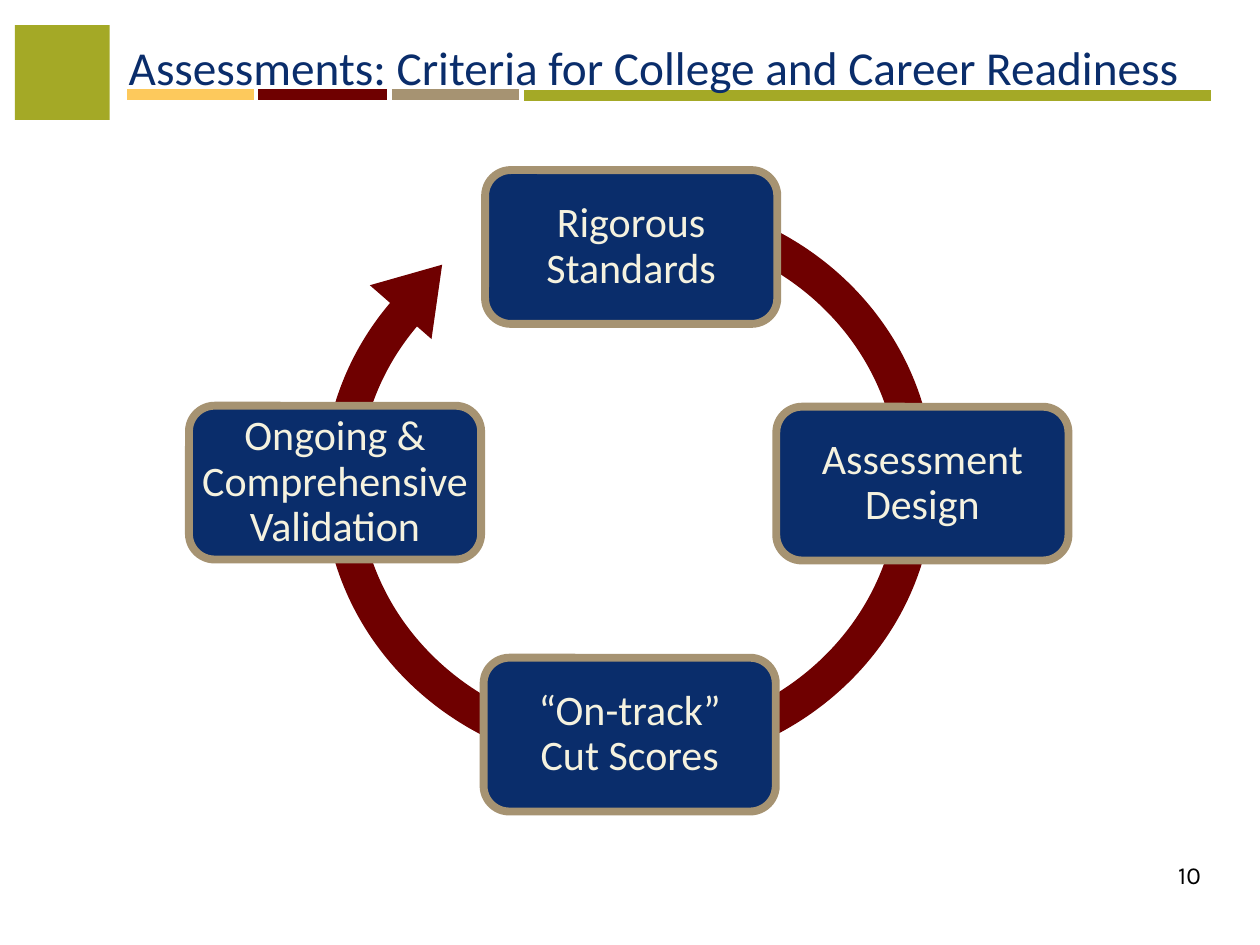
"""Build a slide with a four-step assessment cycle under a ruled title."""
from lxml import etree
from pptx import Presentation
from pptx import util as u
from pptx.dml.color import RGBColor
from pptx.enum import shapes, text
from pptx.oxml.ns import qn

COLORS = {"navy": "0A2D6B", "maroon": "6F0000", "tan": "A69372", "olive": "A4A926",
          "gold": "FDC95C", "cream": "F5F2DF", "white": "FFFFFF", "black": "000000"}
KIND = shapes.MSO_SHAPE


def add_block(kind, box, fill, line=None, width=0):
    shape = slide.shapes.add_shape(kind, *map(u.Cm, box))
    shape.shadow.inherit = False
    shape.fill.solid()
    shape.fill.fore_color.rgb = RGBColor.from_string(COLORS[fill])
    if line:
        shape.line.color.rgb = RGBColor.from_string(COLORS[line])
        shape.line.width = u.Pt(width)
    else:
        shape.line.fill.background()
    return shape


def write(shape, wording, size, font, color, align, anchor):
    frame = shape.text_frame
    frame.text = wording
    frame.vertical_anchor = anchor
    for paragraph in frame.paragraphs:
        paragraph.alignment = align
        for run in paragraph.runs:
            run.font.size = u.Pt(size)
            run.font.name = font
            run.font.color.rgb = RGBColor.from_string(COLORS[color])
    return frame


presentation = Presentation()
presentation.slide_width = u.Cm(25.4)
presentation.slide_height = u.Cm(19.05)
slide = presentation.slides.add_slide(presentation.slide_layouts[5])

rules = [(2.57, 5.13, 1.91, "gold"), (10.57, 24.41, 1.93, "olive"),
         (5.21, 7.8, 1.91, "maroon"), (7.9, 10.46, 1.91, "tan")]
for start, end, y, color in rules:
    rule = slide.shapes.add_connector(
        shapes.MSO_CONNECTOR.STRAIGHT, u.Cm(start), u.Cm(y), u.Cm(end), u.Cm(y))
    rule.line.color.rgb = RGBColor.from_string(COLORS[color])
    rule.line.width = u.Pt(6)
    etree.SubElement(rule._element.spPr, qn("a:effectLst"))

title = slide.shapes.title
title.left, title.top, title.width, title.height = map(u.Cm, (2.34, 0.36, 23.39, 1.68))
write(title, "Assessments: Criteria for College and Career Readiness", 27, "Calibri",
      "navy", text.PP_ALIGN.LEFT, text.MSO_ANCHOR.BOTTOM)
slide.shapes._spTree.append(title._element)

add_block(KIND.RECTANGLE, (0.3, 0.51, 1.91, 1.91), "olive")
ring = add_block(KIND.DONUT, (6.53, 3.94, 12.29, 11.58), "maroon", "maroon", 0.75)
ring.adjustments[0] = 0.06
add_block(KIND.RECTANGLE, (8.48, 4.62, 1.27, 2.92), "white")
arrowhead = add_block(KIND.ISOSCELES_TRIANGLE, (7.67, 5.18, 1.65, 1.27), "maroon")
arrowhead.rotation = 41.1

steps = [(15.65, 8.2, "Assessment\nDesign"),
         (3.81, 8.18, "Ongoing &\nComprehensive\nValidation"),
         (9.75, 13.26, "“On-track”\nCut Scores"),
         (9.78, 3.43, "Rigorous\nStandards")]
for left, top, wording in steps:
    step = add_block(KIND.ROUNDED_RECTANGLE, (left, top, 5.89, 3.1), "navy", "tan", 4.5)
    frame = write(step, wording, 24, "Calibri", "cream",
                  text.PP_ALIGN.CENTER, text.MSO_ANCHOR.MIDDLE)
    frame.word_wrap = False
    for paragraph in frame.paragraphs:
        paragraph.line_spacing = 0.9

number = slide.shapes.add_textbox(*map(u.Cm, (19.18, 16.79, 5.28, 1.27)))
frame = write(number, "10", 14, "Karla", "black",
              text.PP_ALIGN.RIGHT, text.MSO_ANCHOR.BOTTOM)
frame.word_wrap = True

presentation.save("out.pptx")
